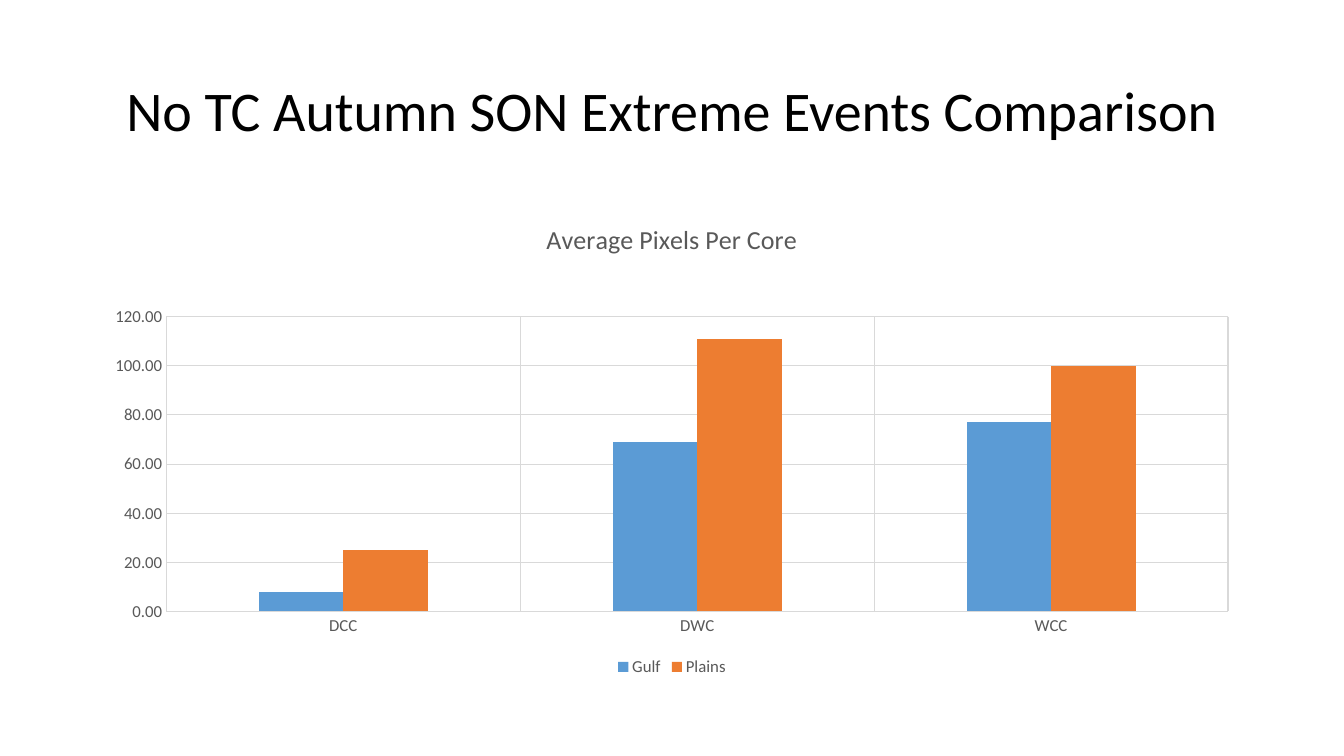
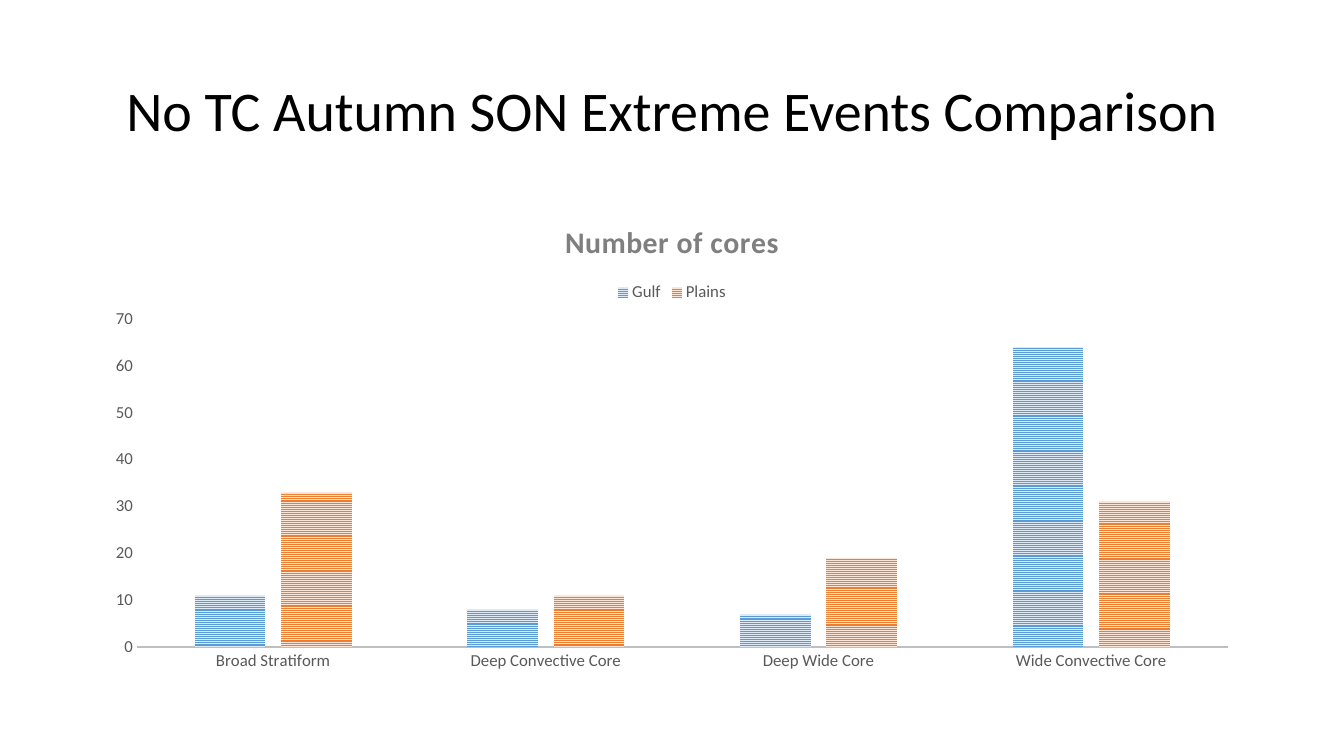
"""Build two slides that compare autumn extreme events in column charts."""
from pptx import Presentation
from pptx.chart.data import CategoryChartData
from pptx.dml.color import RGBColor
from pptx.enum.chart import XL_CHART_TYPE, XL_LEGEND_POSITION, XL_TICK_MARK
from pptx.enum.dml import MSO_PATTERN
from pptx.enum.text import MSO_ANCHOR, PP_ALIGN
from pptx.oxml import parse_xml
from pptx.oxml.ns import nsdecls
from pptx.util import Cm, Pt

COLUMNS = XL_CHART_TYPE.COLUMN_CLUSTERED
NO_TICK = XL_TICK_MARK.NONE
STRIPES = MSO_PATTERN.NARROW_HORIZONTAL
TOP, BOTTOM = XL_LEGEND_POSITION.TOP, XL_LEGEND_POSITION.BOTTOM
MIDDLE, CENTER = MSO_ANCHOR.MIDDLE, PP_ALIGN.CENTER
TITLE_ONLY = 5
FONT = "Calibri"
TITLE = "No TC Autumn SON Extreme Events Comparison"
BLACK, WHITE, TEXT_GREY, GRID_GREY = "000000", "FFFFFF", "595959", "D9D9D9"
SERIES_COLORS = {"Gulf": ("5B9BD5", "DEEBF7"), "Plains": ("ED7D31", "FBE5D6")}
TITLE_BOX = dict(left=Cm(2.33), top=Cm(1.01), width=Cm(29.21), height=Cm(3.68))
CHART_WIDTH, CHART_HEIGHT = 29.21, 12.09

CHARTS = [
    dict(
        title="Average Pixels Per Core", title_size=18.6, title_color=TEXT_GREY,
        bold=False, spacing=0, legend=BOTTOM, categories=["DCC", "DWC", "WCC"],
        values={"Gulf": [8, 69, 77], "Plains": [25, 111, 100]},
        number_format="0.00", maximum=120, step=20, grid=True, striped=False,
        axis_line=(GRID_GREY, 0.75), plot={"gap_width": 219, "overlap": 0},
        area=(1.86, 2.91, 26.76, 7.43),
    ),
    dict(
        title="Number of cores", title_size=21.3, title_color="7F7F7F",
        bold=True, spacing=50, legend=TOP,
        categories=["Broad Stratiform", "Deep Convective Core",
                    "Deep Wide Core", "Wide Convective Core"],
        values={"Gulf": [11, 8, 7, 64], "Plains": [33, 11, 19, 31]},
        number_format="General", maximum=70, step=10, grid=False, striped=True,
        axis_line=("BFBFBF", 1.5), plot={"gap_width": 164, "overlap": -22},
        area=(1.12, 2.96, 27.49, 8.27),
    ),
]


def color(value):
    return RGBColor.from_string(value)


def style(target, **values):
    for name, value in values.items():
        if name == "color":
            target.color.rgb = color(value)
        else:
            setattr(target, name, value)


presentation = Presentation()
style(presentation, slide_width=Cm(33.87), slide_height=Cm(19.05))

for content in CHARTS:
    slide = presentation.slides.add_slide(presentation.slide_layouts[TITLE_ONLY])
    slide.background.fill.solid()
    slide.background.fill.fore_color.rgb = color(WHITE)
    title = slide.shapes.title
    style(title, **TITLE_BOX)
    title.text_frame.text = TITLE
    title.text_frame.vertical_anchor = MIDDLE
    paragraph = title.text_frame.paragraphs[0]
    style(paragraph, alignment=CENTER, line_spacing=0.9)
    style(paragraph.runs[0].font, name=FONT, size=Pt(40), color=BLACK)

    data = CategoryChartData(number_format=content["number_format"])
    data.categories = content["categories"]
    for name, values in content["values"].items():
        data.add_series(name, values)
    chart = slide.shapes.add_chart(
        COLUMNS, Cm(2.33), Cm(5.07), Cm(CHART_WIDTH), Cm(CHART_HEIGHT), data).chart
    style(chart.font, name=FONT, size=Pt(12), color=TEXT_GREY)

    chart.has_title = True
    chart.chart_title.text_frame.text = content["title"]
    run = chart.chart_title.text_frame.paragraphs[0].runs[0]
    style(run.font, name=FONT, size=Pt(content["title_size"]),
          bold=content["bold"], color=content["title_color"])
    chart.element.xpath(".//c:title//a:r/a:rPr")[0].set("spc", str(content["spacing"]))

    chart.has_legend = True
    style(chart.legend, position=content["legend"], include_in_layout=False)

    plot = chart.plots[0]
    style(plot, vary_by_categories=False, **content["plot"])
    for series in plot.series:
        main, pale = SERIES_COLORS[series.name]
        fill = series.format.fill
        if content["striped"]:
            fill.patterned()
            fill.pattern = STRIPES
            fill.back_color.rgb = color(pale)
        else:
            fill.solid()
        fill.fore_color.rgb = color(main)

    line_color, line_width = content["axis_line"]
    style(chart.category_axis.format.line, color=line_color, width=Pt(line_width))
    style(chart.value_axis, minimum_scale=0, maximum_scale=content["maximum"],
          major_unit=content["step"])
    chart.value_axis.format.line.fill.background()
    style(chart.value_axis.tick_labels, number_format=content["number_format"],
          number_format_is_linked=False)
    for axis in (chart.category_axis, chart.value_axis):
        style(axis, major_tick_mark=NO_TICK, minor_tick_mark=NO_TICK,
              has_major_gridlines=content["grid"])
        if content["grid"]:
            style(axis.major_gridlines.format.line, color=GRID_GREY, width=Pt(0.75))

    left, top, width, height = content["area"]
    fractions = {"x": left / CHART_WIDTH, "y": top / CHART_HEIGHT,
                 "w": width / CHART_WIDTH, "h": height / CHART_HEIGHT}
    modes = '<c:xMode val="edge"/><c:yMode val="edge"/>'
    sizes = "".join(f'<c:{key} val="{value:.4f}"/>' for key, value in fractions.items())
    plot_area = chart.element.xpath("c:chart/c:plotArea")[0]
    for layout in plot_area.xpath("c:layout"):
        plot_area.remove(layout)
    plot_area.insert(0, parse_xml(
        f'<c:layout {nsdecls("c")}><c:manualLayout><c:layoutTarget val="inner"/>'
        f'{modes}{sizes}</c:manualLayout></c:layout>'))

presentation.save("out.pptx")
